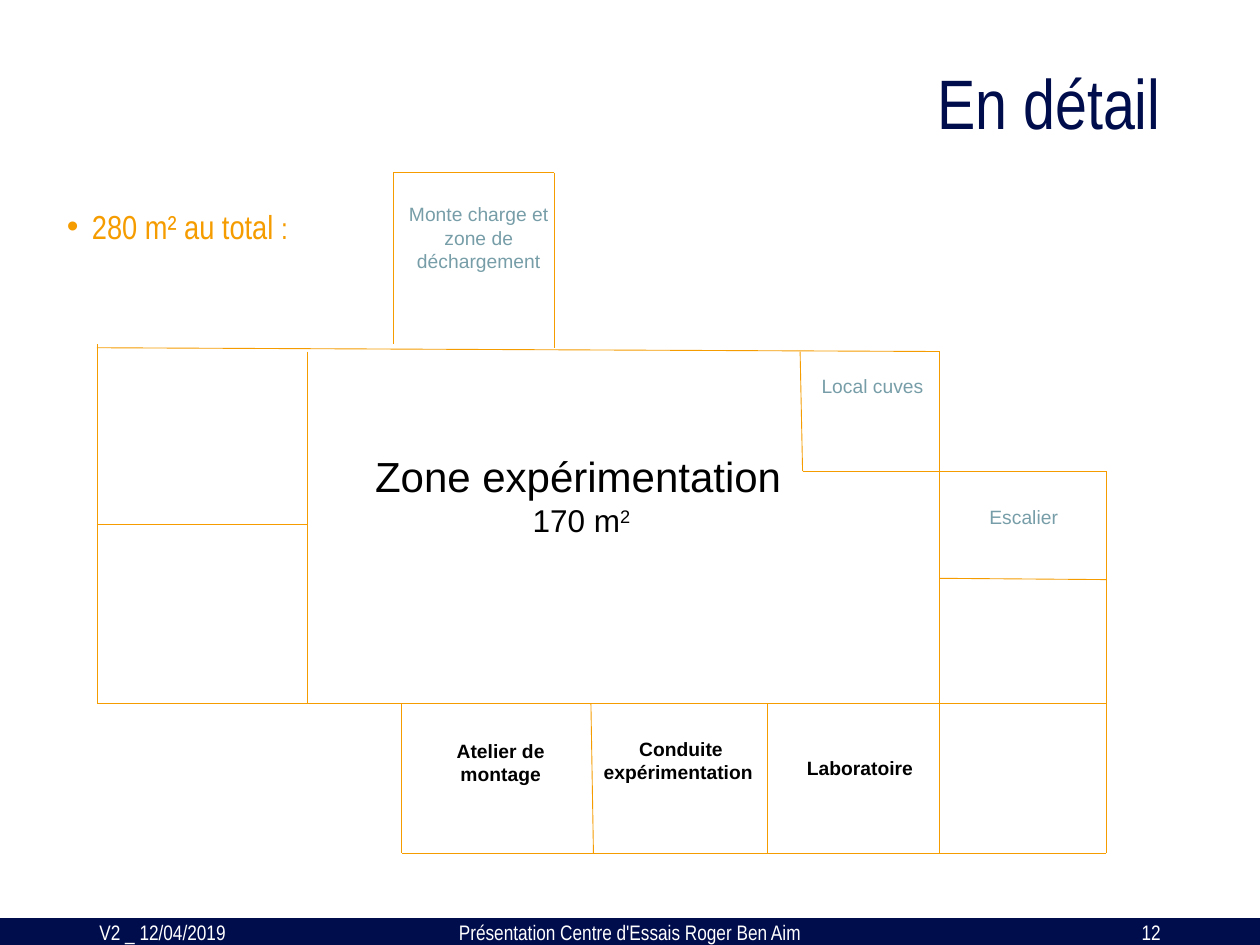
from lxml import etree
from pptx import Presentation
from pptx.dml.color import RGBColor
from pptx.enum import shapes, text
from pptx.oxml.ns import qn
from pptx.util import Inches, Pt

NAVY = RGBColor(0x00, 0x0D, 0x4C)
ORANGE = RGBColor(0xF5, 0x9C, 0x00)
TEAL = RGBColor(0x77, 0x9E, 0xA8)
BLACK = RGBColor(0, 0, 0)
WHITE = RGBColor(0xFF, 0xFF, 0xFF)
NARROW = "Arial Narrow"
LEFT, CENTER, RIGHT = text.PP_ALIGN.LEFT, text.PP_ALIGN.CENTER, text.PP_ALIGN.RIGHT

# Shared edges of the floor plan
WEST, EAST, STAIR = 0.77, 7.46, 8.78
ROOF, STEP, FLOOR, BASE = 2.79, 3.74, 5.58, 6.77
LIFT_L, LIFT_R, LIFT_T = 3.12, 4.4, 1.37
ROOMS = 2.44

WALLS = [
    # main hall
    (WEST, 2.76, EAST, ROOF),
    (EAST, ROOF, EAST, BASE),
    (STAIR, FLOOR, WEST, FLOOR),
    (WEST, FLOOR, WEST, 2.73),
    # west rooms
    (WEST, 4.16, ROOMS, 4.16),
    (ROOMS, ROOF, ROOMS, FLOOR),
    # goods lift
    (LIFT_L, 2.73, LIFT_L, LIFT_T),
    (LIFT_L, LIFT_T, LIFT_R, LIFT_T),
    (LIFT_R, LIFT_T, LIFT_R, 2.76),
    # tank room and stairs
    (6.35, ROOF, 6.37, STEP),
    (STAIR, STEP, 6.37, STEP),
    (STAIR, STEP, STAIR, BASE),
    (EAST, 4.59, STAIR, 4.6),
    # south rooms
    (STAIR, BASE, 3.19, BASE),
    (3.19, BASE, 3.19, FLOOR),
    (4.69, FLOOR, 4.71, BASE),
    (6.09, FLOOR, 6.09, BASE),
]

# box, words, colour, bold
LABELS = [
    ((4.47, 5.8, 1.87, 0.47), "Conduite expérimentation ", BLACK, True),
    ((2.8, 5.82, 2.39, 0.47), "Atelier de \nmontage ", BLACK, True),
    ((5.63, 5.95, 2.39, 0.29), "Laboratoire", BLACK, True),
    ((5.73, 2.92, 2.39, 0.47), "Local cuves", TEAL, False),
    ((6.93, 3.96, 2.39, 0.37), "Escalier", TEAL, False),
    ((3.03, 1.56, 1.54, 0.85), "Monte charge et zone de déchargement", TEAL, False),
]

FOOTERS = [
    (0.69, 2.25, "V2 _ 12/04/2019", LEFT),
    (3.31, 3.38, "Présentation Centre d'Essais Roger Ben Aim", CENTER),
    (7.06, 2.25, "12", RIGHT),
]


def style(font, size, color, name="Arial", bold=False):
    font.size, font.name, font.bold = Pt(size), name, bold
    font.color.rgb = color


def place(shape, box):
    shape.left, shape.top, shape.width, shape.height = map(Inches, box)


def add_text(slide, box, words, size, color, name="Arial", bold=False, align=CENTER):
    frame = slide.shapes.add_textbox(*map(Inches, box)).text_frame
    frame.word_wrap = True
    frame.text = words
    for para in frame.paragraphs:
        para.alignment = align
        style(para.font, size, color, name, bold)
    return frame


def add_wall(slide, ends):
    wall = slide.shapes.add_connector(shapes.MSO_CONNECTOR.STRAIGHT, *map(Inches, ends))
    wall.line.color.rgb = ORANGE
    wall.line.width = Pt(0.5)
    etree.SubElement(wall._element.spPr, qn("a:effectLst"))


def add_title(slide):
    title = slide.shapes.title
    place(title, (2.1, 0.37, 7.21, 0.95))
    frame = title.text_frame
    frame.text = "En détail"
    frame.vertical_anchor = text.MSO_ANCHOR.MIDDLE
    para = frame.paragraphs[0]
    para.alignment, para.line_spacing = RIGHT, 0.9
    style(para.font, 40, NAVY, NARROW)


def add_body(slide):
    body = slide.placeholders[1]
    place(body, (0.43, 1.62, 9.21, 5.43))
    body.text_frame.auto_size = text.MSO_AUTO_SIZE.NONE
    para = body.text_frame.paragraphs[0]
    para.alignment, para.line_spacing = text.PP_ALIGN.JUSTIFY, 0.9
    para.space_before = Pt(0)
    props = para._p.get_or_add_pPr()
    props.set("marL", str(Inches(0.2)))
    props.set("indent", str(Inches(-0.2)))
    etree.SubElement(props, qn("a:buFont")).set("typeface", "Arial")
    etree.SubElement(props, qn("a:buChar")).set("char", "•")
    for words, size in (("280 m² au total ", 19), (":", 17)):
        run = para.add_run()
        run.text = words
        style(run.font, size, ORANGE, NARROW)


def add_footer(slide):
    bar = slide.shapes.add_shape(shapes.MSO_SHAPE.RECTANGLE, *map(Inches, (0, 7.29, 10, 0.21)))
    bar.shadow.inherit = False
    bar.fill.solid()
    bar.fill.fore_color.rgb = bar.line.color.rgb = NAVY
    bar.line.width = Pt(1)
    for left, width, words, align in FOOTERS:
        frame = add_text(slide, (left, 7.3, width, 0.2), words, 12, WHITE, NARROW, align=align)
        frame.vertical_anchor = text.MSO_ANCHOR.MIDDLE


def add_zone(slide):
    frame = add_text(slide, (2.75, 3.53, 3.77, 1.57), "Zone expérimentation ", 24, BLACK)
    para = frame.paragraphs[0]
    para.add_line_break()
    for words in ("170 m", "2 "):
        run = para.add_run()
        run.text = words
        run.font.size = Pt(18)
    run.font._element.set("baseline", "30000")


def main():
    deck = Presentation()
    deck.slide_width, deck.slide_height = Inches(10), Inches(7.5)
    slide = deck.slides.add_slide(deck.slide_layouts[1])
    add_footer(slide)
    add_title(slide)
    add_body(slide)
    for ends in WALLS:
        add_wall(slide, ends)
    add_zone(slide)
    for box, words, color, bold in LABELS:
        add_text(slide, box, words, 11, color, bold=bold)
    deck.save("out.pptx")


if __name__ == "__main__":
    main()
